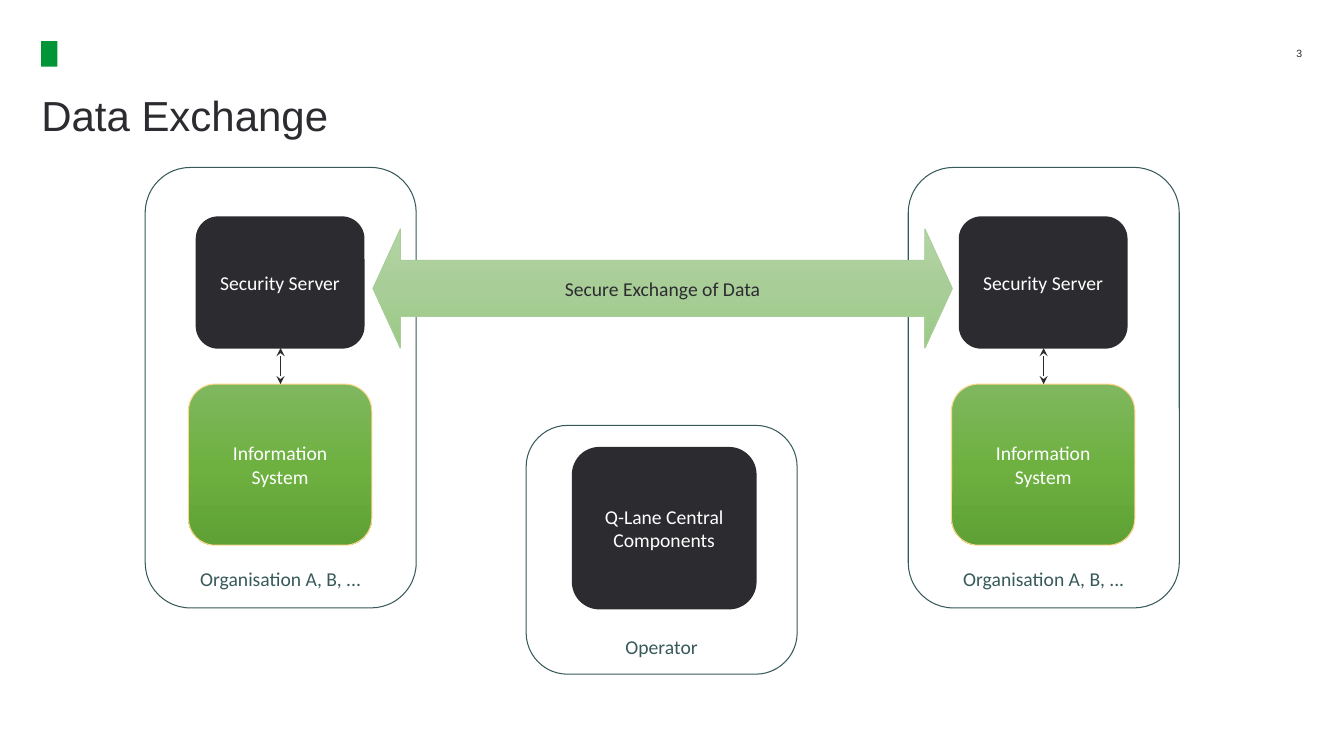
import pptx
import pptx.util
import pptx.dml.color
import pptx.enum.shapes
import pptx.enum.text
import pptx.oxml
import pptx.oxml.ns
import lxml.etree

Cm = pptx.util.Cm
Pt = pptx.util.Pt
RGBColor = pptx.dml.color.RGBColor
Shape = pptx.enum.shapes.MSO_SHAPE
Anchor = pptx.enum.text.MSO_ANCHOR
Align = pptx.enum.text.PP_ALIGN
qn = pptx.oxml.ns.qn

DARK = RGBColor(0x2C, 0x2C, 0x30)
WHITE = RGBColor(0xFF, 0xFF, 0xFF)
TEAL = RGBColor(0x38, 0x59, 0x5A)
EMBLEM_GREEN = RGBColor(0x00, 0x96, 0x38)
SYSTEM_BORDER = RGBColor(0xFF, 0xD6, 0x8E)
ARROW_BORDER = RGBColor(0xAA, 0xCE, 0x9A)
SYSTEM_GREENS = [RGBColor(0x7F, 0xB7, 0x5F), RGBColor(0x6E, 0xB1, 0x41), RGBColor(0x5F, 0xA1, 0x34)]
ARROW_GREENS = [RGBColor(0xB4, 0xD4, 0xA5), RGBColor(0xA8, 0xCD, 0x97), RGBColor(0x9B, 0xC9, 0x85)]

ORGANISATION_LEFT = 3.66
ORGANISATION_PITCH = 19.23


def write_text(shape, text, size, font, color, align, anchor, margins=(0, 0)):
    frame = shape.text_frame
    frame.text = text
    frame.word_wrap = True
    frame.auto_size = pptx.enum.text.MSO_AUTO_SIZE.NONE
    frame.vertical_anchor = anchor
    frame.margin_left = frame.margin_right = Cm(margins[0])
    frame.margin_top = frame.margin_bottom = Cm(margins[1])
    para = frame.paragraphs[0]
    para.alignment = align
    span = para.runs[0]
    span.font.size = Pt(size)
    span.font.name = font
    span.font.color.rgb = color


def fill_gradient(shape, colors):
    shape.fill.gradient()
    shape.fill.gradient_angle = 270
    stops = shape.fill._fill._gradFill.find(qn("a:gsLst"))
    for stop in list(stops):
        stops.remove(stop)
    for index, color in enumerate(colors):
        stop = lxml.etree.SubElement(stops, qn("a:gs"), pos=str(index * 50000))
        lxml.etree.SubElement(stop, qn("a:srgbClr"), val=str(color))


def add_box(page, kind, bounds, text, text_color, border, fill=None, width=0.75, anchor=Anchor.MIDDLE):
    box = page.shapes.add_shape(kind, *map(Cm, bounds))
    box.shadow.inherit = False
    if fill is None:
        box.fill.background()
    elif isinstance(fill, list):
        fill_gradient(box, fill)
    else:
        box.fill.solid()
        box.fill.fore_color.rgb = fill
    box.line.color.rgb = border
    box.line.width = Pt(width)
    write_text(box, text, 14, "Calibri", text_color, Align.CENTER, anchor, (0.18, 0.1))
    return box


def add_group_frame(page, bounds, label):
    add_box(page, Shape.ROUNDED_RECTANGLE, bounds, label, TEAL, TEAL, anchor=Anchor.BOTTOM)


def add_dark_box(page, bounds, label):
    add_box(page, Shape.ROUNDED_RECTANGLE, bounds, label, WHITE, DARK, DARK, width=1)


def add_double_arrow(page, x, top, bottom):
    arrow = page.shapes.add_connector(
        pptx.enum.shapes.MSO_CONNECTOR.STRAIGHT, Cm(x), Cm(bottom), Cm(x), Cm(top))
    arrow.line.color.rgb = DARK
    arrow.line.width = Pt(0.75)
    line = arrow.line._get_or_add_ln()
    for end in ("a:headEnd", "a:tailEnd"):
        lxml.etree.SubElement(line, qn(end), type="stealth")
    lxml.etree.SubElement(arrow._element.spPr, qn("a:effectLst"))


def add_organisation(page, left):
    add_box(page, Shape.ROUNDED_RECTANGLE, (left + 1.09, 9.68, 4.62, 4.06),
            "Information System", WHITE, SYSTEM_BORDER, SYSTEM_GREENS)
    add_group_frame(page, (left, 4.22, 6.83, 11.1), "Organisation A, B, ...")


def add_security_server(page, left):
    add_dark_box(page, (left + 1.29, 5.47, 4.22, 3.3), "Security Server")
    add_double_arrow(page, left + 3.41, 8.77, 9.68)


def add_exchange_arrow(page):
    arrow = add_box(page, Shape.LEFT_RIGHT_ARROW, (9.4, 5.77, 14.6, 3),
                    "Secure Exchange of Data", DARK, ARROW_BORDER, ARROW_GREENS)
    arrow.adjustments[0] = 0.47
    arrow.adjustments[1] = 0.23


def add_header(page):
    emblem = page.shapes.add_shape(Shape.RECTANGLE, Cm(1.04), Cm(1.04), Cm(0.41), Cm(0.64))
    emblem.shadow.inherit = False
    emblem.fill.solid()
    emblem.fill.fore_color.rgb = EMBLEM_GREEN
    emblem.line.fill.background()

    title = page.shapes.title
    title.left, title.top, title.width, title.height = map(Cm, (1.04, 2.26, 31.8, 3.43))
    write_text(title, "Data Exchange", 30, "Arial", DARK, Align.LEFT, Anchor.TOP)

    number = page.shapes.add_textbox(Cm(31.83), Cm(1.04), Cm(0.99), Cm(0.61))
    write_text(number, "3", 7.5, "Arial", DARK, Align.RIGHT, Anchor.MIDDLE)


def main():
    deck = pptx.Presentation()
    deck.slide_width = Cm(33.87)
    deck.slide_height = Cm(19.05)
    page = deck.slides.add_slide(deck.slide_layouts.get_by_name("Title Only"))

    add_header(page)
    organisation_lefts = [ORGANISATION_LEFT + index * ORGANISATION_PITCH for index in range(2)]
    for left in organisation_lefts:
        add_organisation(page, left)
    add_exchange_arrow(page)
    for left in organisation_lefts:
        add_security_server(page, left)
    add_group_frame(page, (13.26, 10.72, 6.83, 6.27), "Operator")
    add_dark_box(page, (14.43, 11.28, 4.62, 4.06), "Q-Lane Central Components")

    deck.save("out.pptx")


if __name__ == "__main__":
    main()
